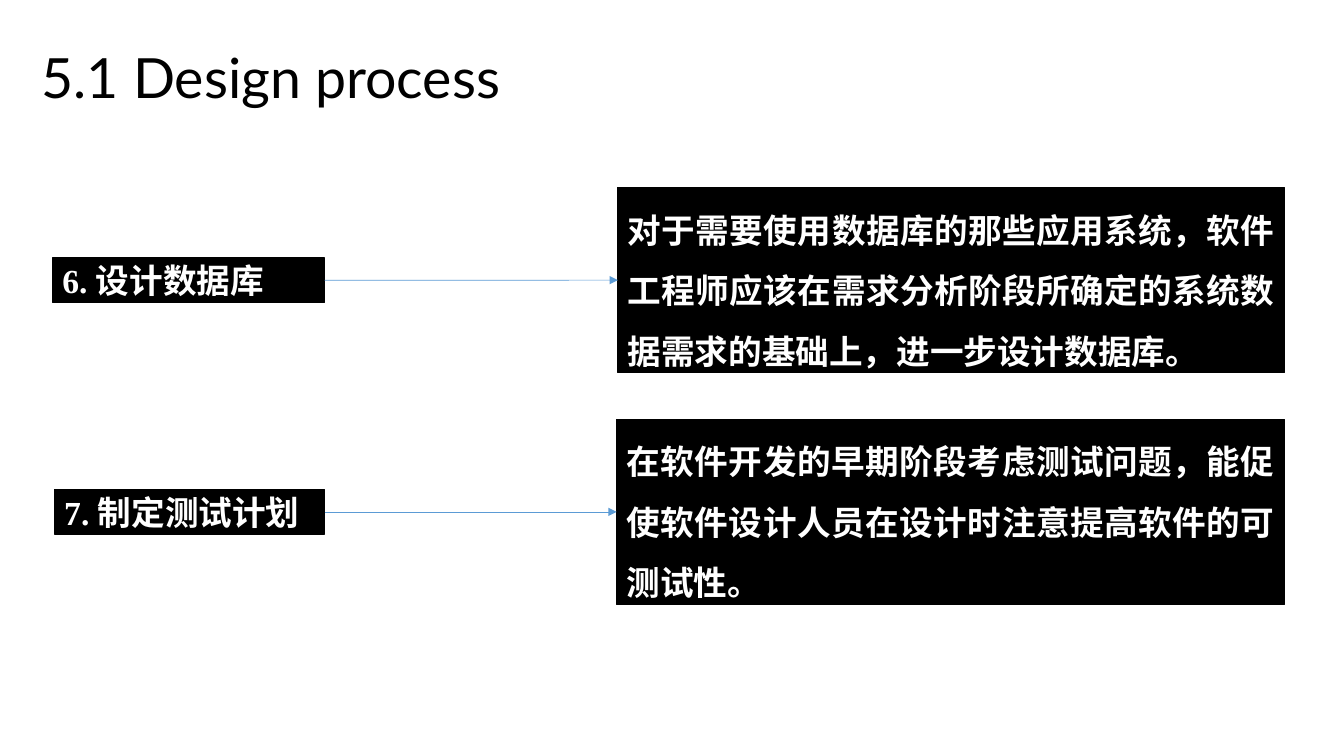
from lxml.etree import SubElement
from pptx import Presentation
from pptx.dml.color import RGBColor
from pptx.enum.shapes import MSO_CONNECTOR, MSO_SHAPE
from pptx.enum.text import MSO_ANCHOR, PP_ALIGN
from pptx.oxml.ns import qn
from pptx.util import Cm, Pt

TITLE = "5.1 Design process"
# step, its left edge, explanation, its left edge (cm)
STEPS = [
    ("6. 设计数据库", 1.32,
     "对于需要使用数据库的那些应用系统，软件工程师应该在需求分析阶段所确定的系统数据需求的基础上，进一步设计数据库。", 15.57),
    ("7. 制定测试计划", 1.37,
     "在软件开发的早期阶段考虑测试问题，能促使软件设计人员在设计时注意提高软件的可测试性。", 15.54),
]
COLORS = {"box": "000000", "text": "FFFFFF", "title": "000000", "arrow": "5B9BD5"}

FIRST_CENTER, ROW_PITCH = 7.06, 5.84
STEP_RIGHT, STEP_HEIGHT = 8.18, 1.12
DETAIL_RIGHT, DETAIL_HEIGHT = 32.37, 4.67


def color(name):
    return RGBColor.from_string(COLORS[name])


def format_text(para, font_name, size, color_name, bold):
    for span in para.runs:
        span.font.name = font_name
        span.font.size = Pt(size)
        span.font.bold = bold
        span.font.color.rgb = color(color_name)


def add_box(page, text, left, right, center, height, align, spacing):
    box = page.shapes.add_shape(MSO_SHAPE.RECTANGLE, Cm(left), Cm(center - height / 2),
                                Cm(right - left), Cm(height))
    box.shadow.inherit = False
    box.fill.solid()
    box.fill.fore_color.rgb = color("box")
    box.line.color.rgb = color("box")
    box.line.width = Pt(1)
    frame = box.text_frame
    frame.word_wrap = True
    frame.vertical_anchor = MSO_ANCHOR.MIDDLE
    frame.text = text
    para = frame.paragraphs[0]
    para.alignment = align
    para.line_spacing = spacing
    format_text(para, "Times New Roman", 24, "text", True)
    return box


def add_arrow(page, start, end):
    arrow = page.shapes.add_connector(MSO_CONNECTOR.STRAIGHT, 0, 0, 0, 0)
    arrow.begin_connect(start, 3)
    arrow.end_connect(end, 1)
    arrow.line.color.rgb = color("arrow")
    arrow.line.width = Pt(0.5)
    SubElement(arrow.line._get_or_add_ln(), qn("a:tailEnd"), type="triangle")
    SubElement(arrow._element.spPr, qn("a:effectLst"))


def main():
    deck = Presentation()
    deck.slide_width, deck.slide_height = Cm(33.87), Cm(19.05)
    page = deck.slides.add_slide(deck.slide_layouts[5])

    title = page.shapes.title
    title.left, title.top, title.width, title.height = Cm(0.79), Cm(1.09), Cm(25.17), Cm(1.9)
    title.text_frame.text = TITLE
    title.text_frame.vertical_anchor = MSO_ANCHOR.MIDDLE
    para = title.text_frame.paragraphs[0]
    para.alignment = PP_ALIGN.LEFT
    para.line_spacing = 0.9
    format_text(para, "Lato", 39.6, "title", False)

    for row, (step, step_left, detail, detail_left) in enumerate(STEPS):
        center = FIRST_CENTER + row * ROW_PITCH
        step_box = add_box(page, step, step_left, STEP_RIGHT, center, STEP_HEIGHT,
                           PP_ALIGN.LEFT, 1.0)
        detail_box = add_box(page, detail, detail_left, DETAIL_RIGHT, center, DETAIL_HEIGHT,
                             PP_ALIGN.JUSTIFY, 1.5)
        add_arrow(page, step_box, detail_box)

    deck.save("out.pptx")


if __name__ == "__main__":
    main()
